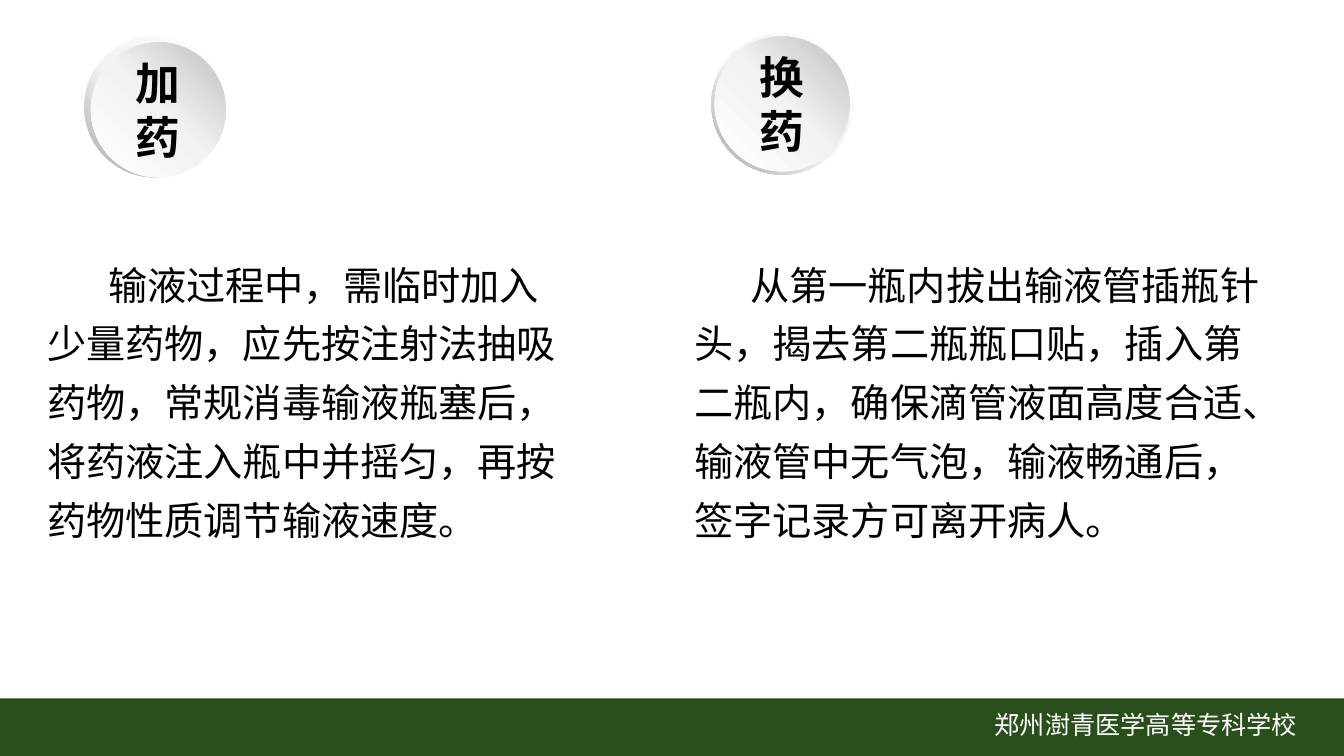
from copy import deepcopy

from pptx import Presentation
from pptx import util as u
from pptx.dml.color import RGBColor
from pptx.enum import shapes, text
from pptx.oxml import ns, parse_xml

Cm, Pt = u.Cm, u.Pt


def color(hex_value):
    return RGBColor.from_string(hex_value)


def write(shape, words, size, font, hex_value, **formats):
    """Fill a shape with one wrapped paragraph and return the paragraph."""
    shape.text_frame.word_wrap = True
    para = shape.text_frame.paragraphs[0]
    span = para.add_run()
    span.text = words
    formats.update(size=Pt(size), name=font)
    for name, value in formats.items():
        setattr(span.font, name, value)
    span.font.color.rgb = color(hex_value)
    east_asian = parse_xml(f'<a:ea {ns.nsdecls("a")} typeface="Noto Sans CJK SC"/>')
    span.font._element.find(ns.qn("a:latin")).addnext(east_asian)
    return para


deck = Presentation()
deck.slide_width, deck.slide_height = Cm(33.87), Cm(19.05)
page = deck.slides.add_slide(deck.slide_layouts[6])

# Footer bar with the school name
bar = page.shapes.add_shape(
    shapes.MSO_SHAPE.RECTANGLE, 0, Cm(17.6), deck.slide_width, Cm(1.5))
bar.shadow.inherit = False
bar.fill.solid()
bar.fill.fore_color.rgb = color("2A4F1C")
bar.line.fill.background()
school = page.shapes.add_textbox(Cm(24.82), Cm(17.75), Cm(8.2), Cm(1.3))
write(school, "郑州澍青医学高等专科学校", 18, "Noto Sans CJK SC", "FFFFFF")

# Round badges: a gradient ring behind a gradient disc
RING, DISC = 3.56, 3.4
ring_stops = [(0, "FFFFFF"), (0.55, "F2F2F2"), (1, "A6A6A6")]
disc_stops = [(0, "FFFFFF"), (0.51, "F2F2F2"), (1, "BFBFBF")]
badges = [
    ("加药", (2.13, 0.91), (2.29, 1.07)),
    ("换药", (17.93, 0.84), (18.01, 0.92)),
]
for title, ring_at, disc_at in badges:
    badge = page.shapes.add_group_shape()
    for kind, at, size, stops, angle in (
        (shapes.MSO_SHAPE.DONUT, ring_at, RING, ring_stops, 225),
        (shapes.MSO_SHAPE.OVAL, disc_at, DISC, disc_stops, 45),
    ):
        circle = badge.shapes.add_shape(
            kind, Cm(at[0]), Cm(at[1]), Cm(size), Cm(size))
        circle.shadow.inherit = False
        circle.line.fill.background()
        circle.fill.gradient()
        circle.fill.gradient_angle = angle
        # The default gradient has two stops; add a third
        stop_list = circle._element.spPr.find(".//" + ns.qn("a:gsLst"))
        stop_list.append(deepcopy(stop_list[-1]))
        for stop, (position, hex_value) in zip(circle.fill.gradient_stops, stops):
            stop.position = position
            stop.color.rgb = color(hex_value)
        if kind == shapes.MSO_SHAPE.DONUT:
            circle.adjustments[0] = 0.049
        else:
            circle.text_frame.vertical_anchor = text.MSO_ANCHOR.MIDDLE
            para = write(circle, title, 32, "Arial", "000000", bold=True)
            para.alignment = text.PP_ALIGN.CENTER

# Explanations, both ending on the same line
BOTTOM = 13.72
explanations = [
    (0.94, 6.15, 13.59, 0.13, 1.54,
     "输液过程中，需临时加入少量药物，应先按注射法抽吸药物，常规消毒输液瓶塞后，"
     "将药液注入瓶中并摇匀，再按药物性质调节输液速度。"),
    (17.25, 5.72, 15.11, 0.56, 1.41,
     "从第一瓶内拔出输液管插瓶针头，揭去第二瓶瓶口贴，插入第二瓶内，"
     "确保滴管液面高度合适、输液管中无气泡，输液畅通后，签字记录方可离开病人。"),
]
for left, top, width, inset, indent, words in explanations:
    box = page.shapes.add_textbox(Cm(left), Cm(top), Cm(width), Cm(BOTTOM - top))
    box.text_frame.margin_top = Cm(inset)
    box.text_frame.auto_size = text.MSO_AUTO_SIZE.SHAPE_TO_FIT_TEXT
    para = write(box, words, 28, "Arial", "000000")
    para.line_spacing = 1.25
    para._p.get_or_add_pPr().set("indent", str(Cm(indent)))

deck.save("out.pptx")
